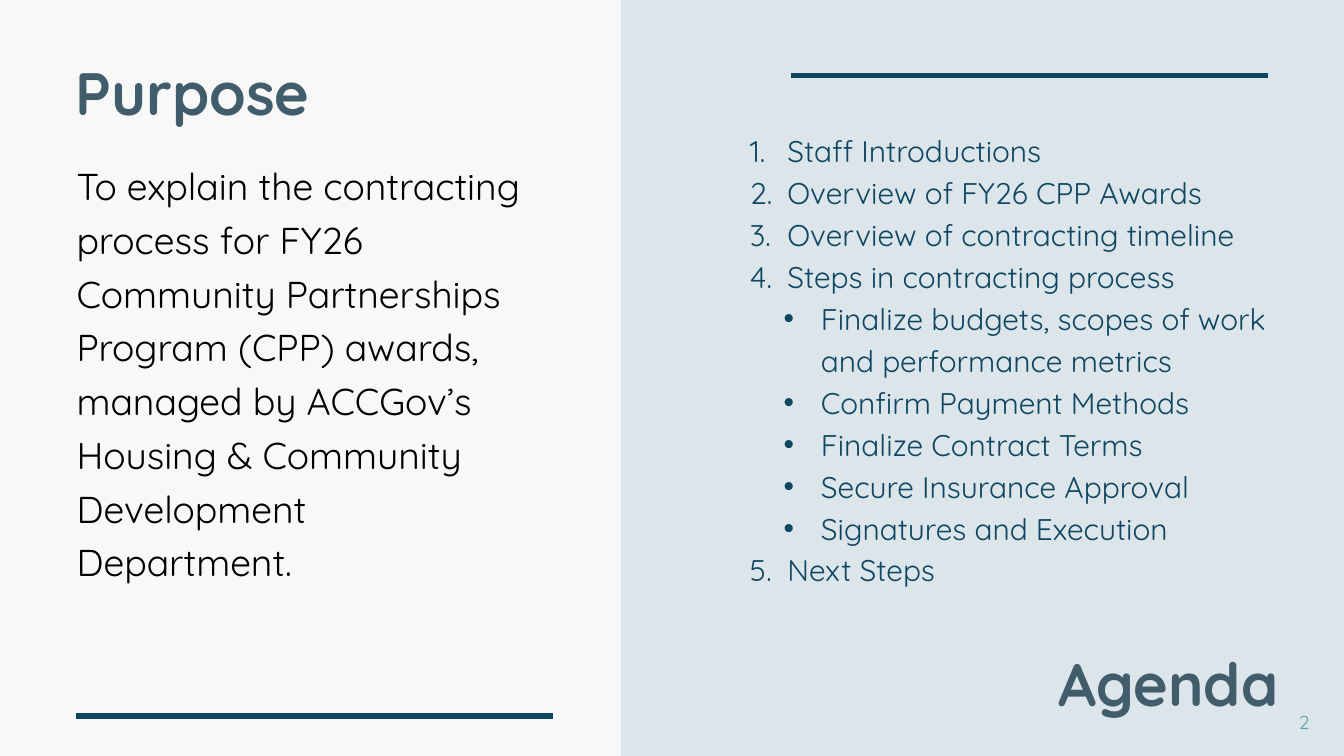
from pptx import Presentation
from pptx.dml.color import RGBColor
from pptx.enum.shapes import MSO_CONNECTOR, MSO_SHAPE
from pptx.enum.text import MSO_ANCHOR, PP_ALIGN
from pptx.oxml.ns import qn
from pptx.util import Pt
from lxml.etree import SubElement

NAVY, SLATE = "0F4662", "415D6B"


def color(code):
    return RGBColor.from_string(code)


def add_text(box, lines, size, code, inset=0, **format):
    """Add a text box with one paragraph per line and return its paragraphs."""
    frame = slide.shapes.add_textbox(*map(Pt, box)).text_frame
    frame.word_wrap = True
    for side in ("left", "right", "top", "bottom"):
        setattr(frame, f"margin_{side}", Pt(inset))
    frame.vertical_anchor = format.pop("anchor", MSO_ANCHOR.TOP)
    bold = format.pop("bold", False)
    frame.text = "\n".join(lines)
    for para in frame.paragraphs:
        for name, value in format.items():
            setattr(para, name, value)
        font = para.runs[0].font
        font.name, font.size, font.bold = "Quicksand", Pt(size), bold
        font.color.rgb = color(code)
    return frame.paragraphs


deck = Presentation()
deck.slide_width, deck.slide_height = Pt(1440), Pt(810)
slide = deck.slides.add_slide(deck.slide_layouts[6])
slide.background.fill.solid()
slide.background.fill.fore_color.rgb = color("F8F8F8")

panel = slide.shapes.add_shape(
    MSO_SHAPE.RECTANGLE, Pt(665.3), Pt(0), Pt(774.7), Pt(810))
panel.shadow.inherit = False
panel.fill.solid()
panel.fill.fore_color.rgb = color("DBE5EA")
panel.line.fill.background()

# Agenda list: level 0 is numbered, level 1 is bulleted
agenda = [
    (0, "Staff Introductions"),
    (0, "Overview of FY26 CPP Awards"),
    (0, "Overview of contracting timeline"),
    (0, "Steps in contracting process"),
    (1, "Finalize budgets, scopes of work and performance metrics"),
    (1, "Confirm Payment Methods"),
    (1, "Finalize Contract Terms"),
    (1, "Secure Insurance Approval"),
    (1, "Signatures and Execution"),
    (0, "Next Steps"),
]
paras = add_text((803.5, 136, 566, 633), [text for _, text in agenda],
                 32, NAVY, line_spacing=Pt(44.9))
for para, (level, _) in zip(paras, agenda):
    para.level = level
    props = para._p.get_or_add_pPr()
    props.set("marL", str(Pt(40 + 36 * level)))
    props.set("indent", str(Pt(-40)))
    if level:
        SubElement(props, qn("a:buFont"), typeface="Arial")
        SubElement(props, qn("a:buChar"), char="•")
    else:
        SubElement(props, qn("a:buAutoNum"), type="arabicPeriod")

for left, top in ((81, 767), (848, 81)):
    rule = slide.shapes.add_connector(
        MSO_CONNECTOR.STRAIGHT, Pt(left), Pt(top), Pt(left + 511), Pt(top))
    rule.line.color.rgb = color(NAVY)
    rule.line.width = Pt(6)
    SubElement(rule._element.spPr, qn("a:effectLst"))

heads = [
    ("Purpose", 81, 47.5, PP_ALIGN.LEFT),
    ("Agenda", 736, 680.5, PP_ALIGN.RIGHT),
]
for text, left, top, align in heads:
    add_text((left, top, 633.5, 86.5), [text], 64, SLATE, bold=True,
             alignment=align, line_spacing=Pt(89.6))

purpose = ("To explain the contracting process for FY26 Community Partnerships "
           "Program (CPP) awards, managed by ACCGov’s Housing & Community "
           "Development Department.")
add_text((82, 165.5, 476, 461), [purpose], 40, "000000", line_spacing=1.2)

add_text((1242, 759, 168, 29), ["2"], 20, "5AA2AE", inset=7.2,
         alignment=PP_ALIGN.RIGHT, anchor=MSO_ANCHOR.MIDDLE)

deck.save("out.pptx")
